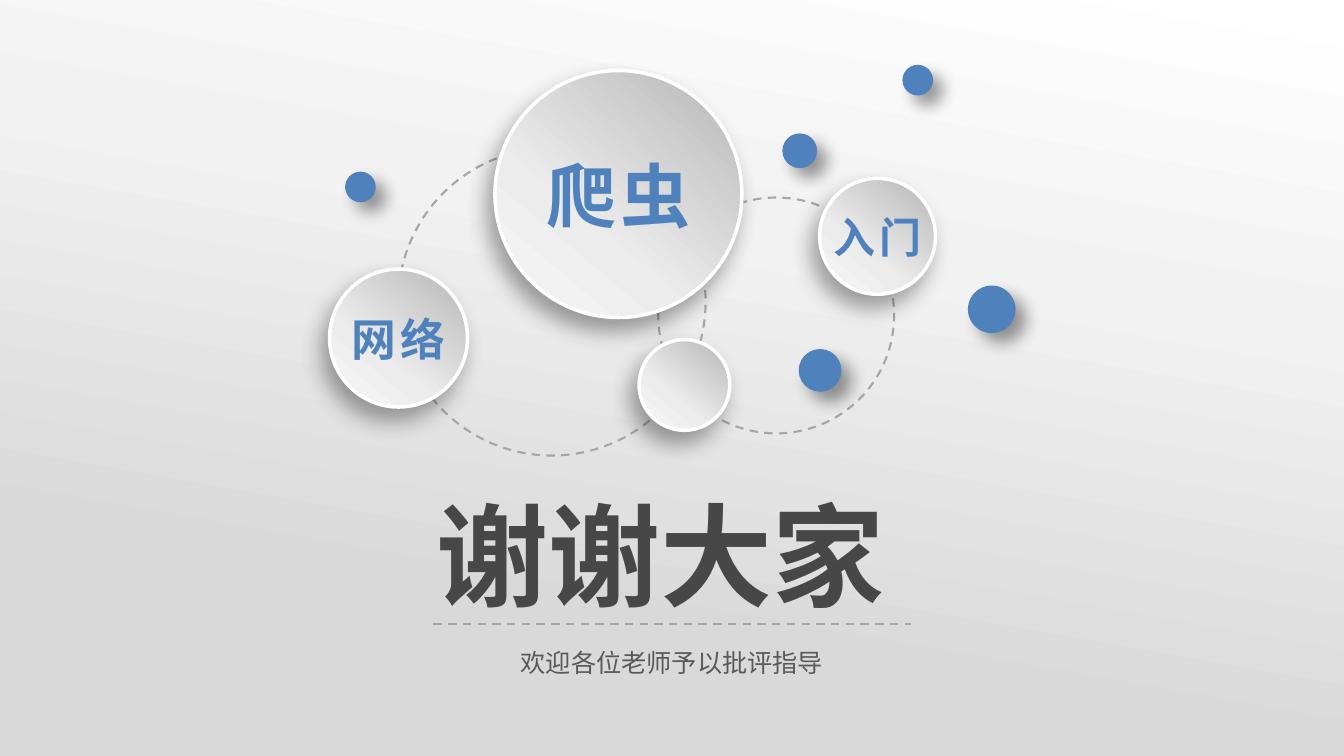
from lxml.etree import SubElement
from pptx import Presentation
from pptx.dml.color import RGBColor
from pptx.enum.dml import MSO_LINE
from pptx.enum.shapes import MSO_CONNECTOR, MSO_SHAPE
from pptx.enum.text import MSO_ANCHOR, PP_ALIGN
from pptx.oxml.ns import qn
from pptx.util import Pt

W, H = 960, 540
CJK = "Noto Sans CJK SC"
COLORS = {
    "blue": "4F81BD", "title": "474747", "subtitle": "595959", "dash": "A6A6A6",
    "rim": "FFFFFF", "ball_shadow": "1A1A1A", "dot_shadow": "000000",
}
BACKDROP = [(0, "FFFFFF"), (34, "F2F2F2"), (76, "D9D9D9")]
BALL = [(9, "BEBEBE"), (63, "ECECEC"), (100, "F7F7F7")]
RINGS = [(235.2, 94.1, 168.5), (49.4, 58.8, 219.6)]
DOTS = [(456.9, 157.5, 33), (324.4, 48.8, 23.8), (12, 76.1, 20.9),
        (336, 202.8, 29.5), (410.1, -0.2, 20.9)]
BALLS = [(118.5, 3.4, 176.4, "爬虫", 50, 122, 68),
         (350.4, 80.4, 82.8, "入门", 30, 87, 44),
         (0.4, 145.2, 98.6, "网络", 32, 87, 46)]


def rgb(name):
    """Return the palette colour of that name."""
    return RGBColor.from_string(COLORS[name])


def add_text(shapes, text, box, size, color, font=CJK, bold=False,
             align=PP_ALIGN.CENTER, spacing=0):
    """Add a one-line text box, vertically centred in its box."""
    tf = shapes.add_textbox(*map(Pt, box)).text_frame
    tf.word_wrap = True
    tf.vertical_anchor = MSO_ANCHOR.MIDDLE
    tf.margin_left = tf.margin_right = tf.margin_top = tf.margin_bottom = 0
    p = tf.paragraphs[0]
    p.alignment = align
    r = p.add_run()
    r.text = text
    r.font.size, r.font.bold, r.font.name = Pt(size), bold, font
    r.font.color.rgb = rgb(color)
    props = r.font._element
    SubElement(props, qn("a:ea"), typeface=CJK)
    if spacing:
        props.set("spc", str(spacing * 100))


def add_plain(shapes, kind, box):
    """Add a preset shape without theme shadow."""
    s = shapes.add_shape(kind, *map(Pt, box))
    s.shadow.inherit = False
    return s


def set_gradient(s, stops, angle):
    """Fill a shape with a linear gradient, its angle clockwise."""
    s.fill.gradient()
    grad = s._element.spPr.find(qn("a:gradFill"))
    for child in list(grad):
        grad.remove(child)
    stop_list = SubElement(grad, qn("a:gsLst"))
    for pos, color in stops:
        stop = SubElement(stop_list, qn("a:gs"), pos=str(pos * 1000))
        SubElement(stop, qn("a:srgbClr"), val=color)
    SubElement(grad, qn("a:lin"), ang=str(angle * 60000), scaled="0")


def set_shadow(s, color, blur, dist, angle):
    """Give a shape an outer shadow of 40 percent opacity."""
    effects = s._element.spPr.find(qn("a:effectLst"))
    shadow = SubElement(effects, qn("a:outerShdw"), blurRad=str(Pt(blur)), dist=str(Pt(dist)),
                        dir=str(angle * 60000), algn="ctr", rotWithShape="0")
    clr = SubElement(shadow, qn("a:srgbClr"), val=COLORS[color])
    SubElement(clr, qn("a:alpha"), val="40000")


def set_line(line, color, width, dashed=False):
    """Format an outline or a connector line."""
    line.color.rgb = rgb(color)
    line.width = Pt(width)
    if dashed:
        line.dash_style = MSO_LINE.DASH


def add_ball(shapes, x, y, d):
    """Add a raised grey ball with a white rim."""
    s = add_plain(shapes, MSO_SHAPE.OVAL, (x, y, d, d))
    set_gradient(s, BALL, 130)
    set_line(s.line, "rim", 2.5)
    set_shadow(s, "ball_shadow", 16, 10, 120)


def draw_backdrop(shapes, box):
    """Fill the box with the pale gradient."""
    s = add_plain(shapes, MSO_SHAPE.RECTANGLE, box)
    set_gradient(s, BACKDROP, 100)
    s.line.fill.background()


def draw_network(shapes, left, top):
    """Draw rings, dots and labelled balls from the given corner."""
    for x, y, d in RINGS:
        s = add_plain(shapes, MSO_SHAPE.OVAL, (left + x, top + y, d, d))
        s.fill.background()
        set_line(s.line, "dash", 1.5, dashed=True)
    add_ball(shapes, left + 221.5, top + 195.6, 64.8)
    for x, y, d in DOTS:
        s = add_plain(shapes, MSO_SHAPE.OVAL, (left + x, top + y, d, d))
        s.fill.solid()
        s.fill.fore_color.rgb = rgb("blue")
        set_line(s.line, "blue", 1)
        set_shadow(s, "dot_shadow", 12, 10, 45)
    for x, y, d, label, size, w, h in BALLS:
        group = shapes.add_group_shape().shapes
        add_ball(group, left + x, top + y, d)
        box = (left + x + (d - w) / 2, top + y + (d - h) / 2, w, h)
        add_text(group, label, box, size, "blue", bold=True, spacing=3)


def draw_closing(shapes, left, top, width):
    """Draw the thanks, the dashed rule and the line below it."""
    add_text(shapes, "谢谢大家", (left + 2.2, top, width, 104.4), 80, "title",
             bold=True, align=PP_ALIGN.JUSTIFY)
    rule_y = Pt(top + 102.2)
    rule = shapes.add_connector(MSO_CONNECTOR.STRAIGHT, Pt(left), rule_y,
                                Pt(left + width), rule_y)
    set_line(rule.line, "dash", 1.5, dashed=True)
    SubElement(rule._element.spPr, qn("a:effectLst"))
    add_text(shapes, "欢迎各位老师予以批评指导", (left + 29.4, top + 115.2, width - 58.8, 28.8),
             18, "subtitle", font="Arial")


def main():
    """Build and save the closing slide."""
    prs = Presentation()
    prs.slide_width, prs.slide_height = Pt(W), Pt(H)
    shapes = prs.slides.add_slide(prs.slide_layouts[6]).shapes
    draw_backdrop(shapes, (0, 0, W, H))
    draw_closing(shapes, 309.6, 343.4, 340.8)
    draw_network(shapes, 235, 47)
    prs.save("out.pptx")


if __name__ == "__main__":
    main()
